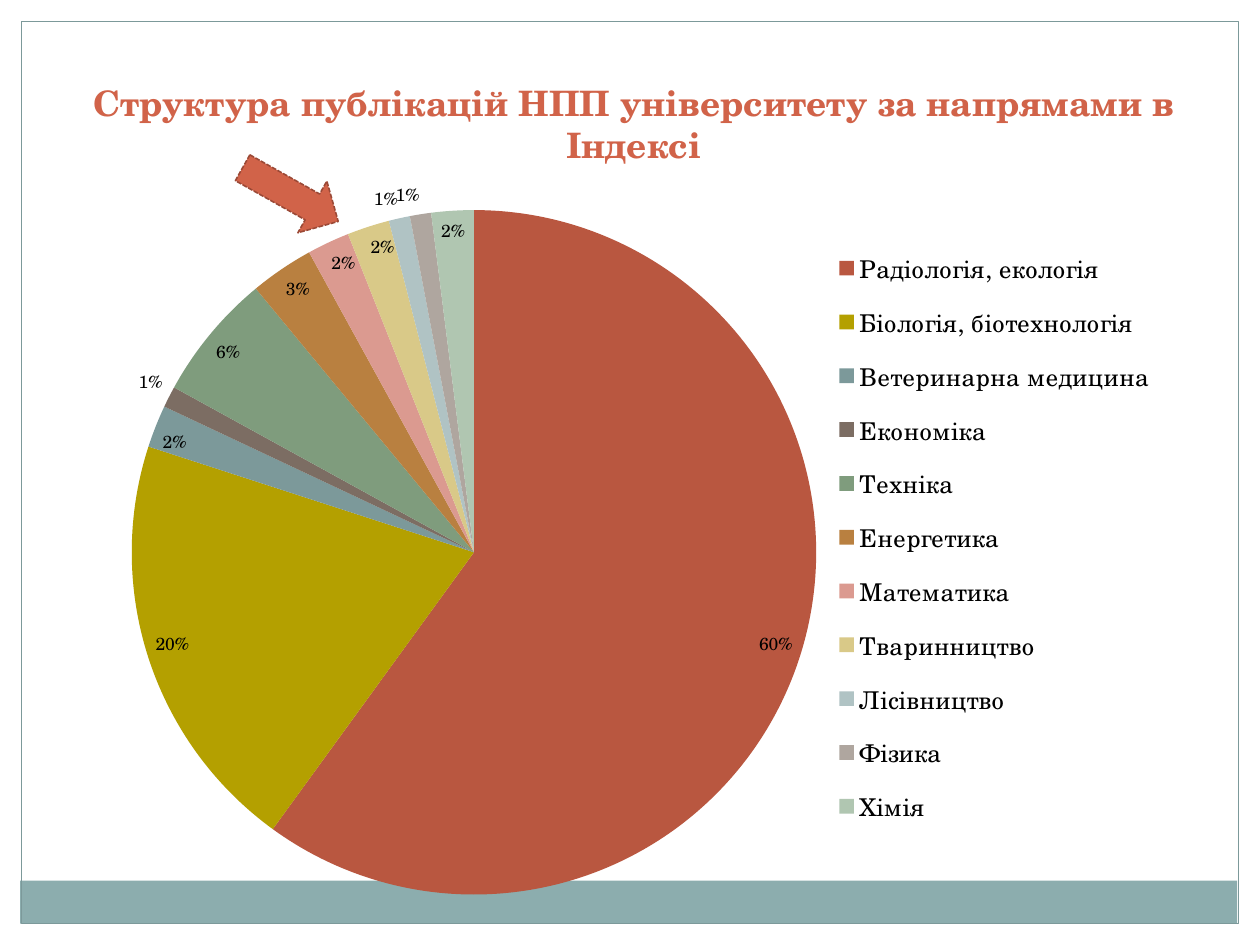
from dataclasses import dataclass
from lxml import etree
from pptx import Presentation
from pptx.chart.data import CategoryChartData
from pptx.dml.color import RGBColor
from pptx.enum.chart import XL_CHART_TYPE as Chart, XL_LABEL_POSITION as LabelPos, XL_LEGEND_POSITION as LegendPos
from pptx.enum.dml import MSO_LINE
from pptx.enum.shapes import MSO_SHAPE as Shape
from pptx.enum.text import MSO_ANCHOR, PP_ALIGN
from pptx.oxml.ns import qn
from pptx.util import Inches, Pt


@dataclass(frozen=True)
class Theme:
    font: str = "TeX Gyre Schola"
    accent: str = "D16349"
    accent_dark: str = "9B4936"
    band: str = "8CADAE"
    frame: str = "7C999A"
    white: str = "FFFFFF"
    black: str = "000000"
    title_size: int = 20
    legend_size: int = 14
    label_size: int = 10


T = Theme()
rgb = RGBColor.from_string

prs = Presentation()
prs.slide_width, prs.slide_height = Inches(10), Inches(7.5)
s = prs.slides.add_slide(prs.slide_layouts[6])


def add_box(x, y, w, h, text=None, kind=Shape.RECTANGLE, fill=None, line=None,
            line_width=0.75, size=T.title_size, color=T.accent, bold=True):
    """Add a text box when text is given, otherwise a preset shape."""
    at = [Inches(v) for v in (x, y, w, h)]
    if text:
        sp = s.shapes.add_textbox(*at)
        tf = sp.text_frame
        tf.word_wrap = True
        tf.vertical_anchor = MSO_ANCHOR.BOTTOM
        p = tf.paragraphs[0]
        p.alignment = PP_ALIGN.CENTER
        r = p.add_run()
        r.text = text
        r.font.name, r.font.size, r.font.bold = T.font, Pt(size), bold
        r.font.color.rgb = rgb(color)
        return sp
    sp = s.shapes.add_shape(kind, *at)
    sp.shadow.inherit = False
    if fill:
        sp.fill.solid()
        sp.fill.fore_color.rgb = rgb(fill)
    else:
        sp.fill.background()
    if line:
        sp.line.color.rgb = rgb(line)
        sp.line.width = Pt(line_width)
    else:
        sp.line.fill.background()
    return sp


def set_layout(parent, index, x, y, w, h, inner=False):
    """Fix a chart part's place, in fractions of the chart area."""
    for old in parent.findall(qn("c:layout")):
        parent.remove(old)
    layout = etree.Element(qn("c:layout"))
    manual = etree.SubElement(layout, qn("c:manualLayout"))
    values = {"layoutTarget": "inner"} if inner else {}
    values |= {"xMode": "edge", "yMode": "edge", "x": x, "y": y, "w": w, "h": h}
    for tag, value in values.items():
        etree.SubElement(manual, qn(f"c:{tag}")).set("val", str(value))
    parent.insert(index, layout)


# Page margins, footer band and frame
for margin in [(0, 0, 10, 0.17), (9.83, 0, 0.17, 7.5), (0, 0, 0.17, 7.5)]:
    add_box(*margin, fill=T.white)
add_box(0.16, 6.99, 9.66, 0.34, fill=T.band)
add_box(0.17, 0.17, 9.66, 7.16, line=T.frame)

# Pie of publications by field: name, share, slice colour
fields = [
    ("Радіологія, екологія", 0.6, "B95740"),
    ("Біологія, біотехнологія", 0.2, "B4A000"),
    ("Ветеринарна медицина", 0.02, "7C999A"),
    ("Економіка", 0.01, "7C6D63"),
    ("Техніка", 0.06, "7F9C7D"),
    ("Енергетика", 0.03, "B98040"),
    ("Математика", 0.02, "DB9A90"),
    ("Тваринництво", 0.02, "D9C988"),
    ("Лісівництво", 0.01, "B0C3C4"),
    ("Фізика", 0.01, "AFA69F"),
    ("Хімія", 0.02, "B0C6B1"),
]
data = CategoryChartData(number_format="0%")
data.categories = [name for name, _, _ in fields]
data.add_series("Series 1", [share for _, share, _ in fields])
chart = s.shapes.add_chart(Chart.PIE, Inches(0.78), Inches(1.25),
                           Inches(8.52), Inches(5.97), data).chart
chart.has_title = False
chart.font.name, chart.font.size = T.font, Pt(T.label_size)
chart.font.color.rgb = rgb(T.black)
chart.has_legend = True
legend = chart.legend
legend.position = LegendPos.RIGHT
legend.include_in_layout = False
legend.font.name, legend.font.size = T.font, Pt(T.legend_size)
legend.font.color.rgb = rgb(T.black)

plot = chart.plots[0]
plot.vary_by_categories = True
series = plot.series[0]
labels = series.data_labels
labels.show_value = True
labels.number_format, labels.number_format_is_linked = "0%", False
labels.position = LabelPos.INSIDE_END
labels.font.name, labels.font.size = T.font, Pt(T.label_size)
labels.font.color.rgb = rgb(T.black)
for i, (_, share, color) in enumerate(fields):
    point = series.points[i]
    point.format.fill.solid()
    point.format.fill.fore_color.rgb = rgb(color)
    if share <= 0.01:
        label = point.data_label
        label.font.name, label.font.size = T.font, Pt(T.label_size)
        label.font.color.rgb = rgb(T.black)
        label.position = LabelPos.OUTSIDE_END

plot_area = chart.element.find(".//" + qn("c:plotArea"))
legend_part = chart.element.find(".//" + qn("c:legend"))
set_layout(plot_area, 0, 0.03, 0.07, 0.64, 0.91, inner=True)
set_layout(legend_part, 1, 0.68, 0.1, 0.31, 0.81)

# Title and pointer
add_box(0.47, 0.94, 9.12, 0.42, "Структура публікацій НПП університету за напрямами в Індексі")
arrow = add_box(1.87, 1.31, 0.87, 0.47, kind=Shape.RIGHT_ARROW,
                fill=T.accent, line=T.accent_dark, line_width=0.9)
arrow.line.dash_style = MSO_LINE.SQUARE_DOT
arrow.rotation = 29.3

prs.save("out.pptx")
